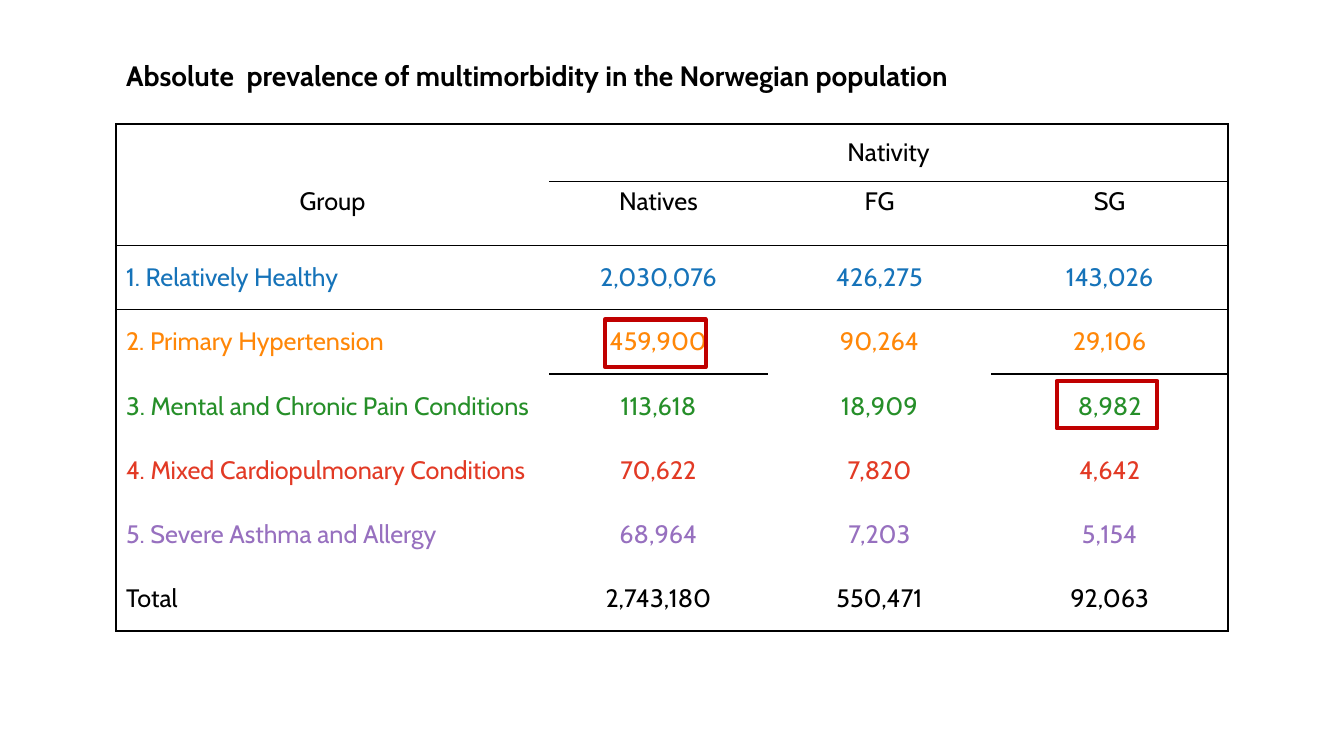
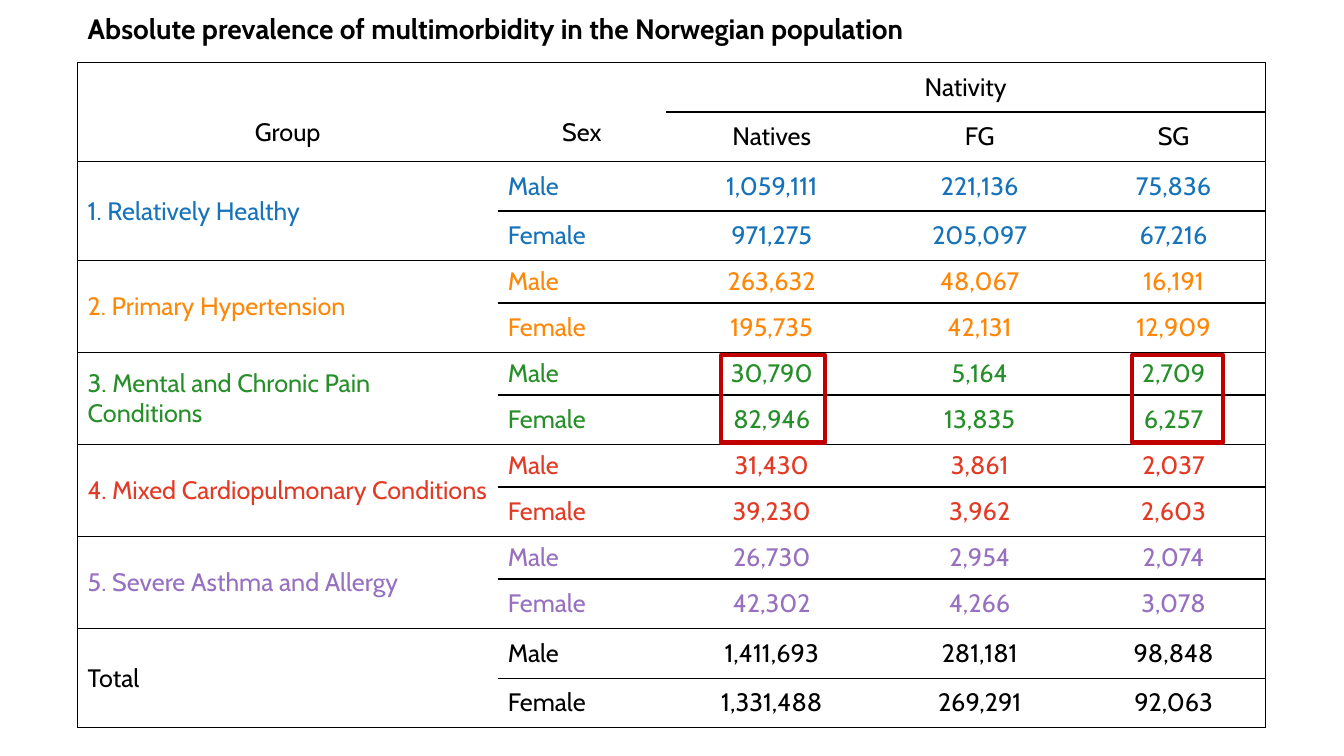
from lxml import etree
from pptx import Presentation
from pptx.dml.color import RGBColor
from pptx.enum.shapes import MSO_SHAPE
from pptx.enum.text import MSO_ANCHOR, MSO_AUTO_SIZE, PP_ALIGN
from pptx.oxml.ns import qn
from pptx.util import Inches, Pt

RECTANGLE = MSO_SHAPE.RECTANGLE
TOP, MIDDLE = MSO_ANCHOR.TOP, MSO_ANCHOR.MIDDLE
LEFT, CENTER = PP_ALIGN.LEFT, PP_ALIGN.CENTER
NO_AUTOFIT = MSO_AUTO_SIZE.NONE
PLAIN_TABLE_STYLE = "{2D5ABB26-0587-4C30-8999-92F81FD0307C}"


class Theme:
    font = "Cabin"
    title_size, body_size = Pt(20), Pt(18)
    rule_width, highlight_width = Pt(1), Pt(3)
    ink, paper, highlight = "000000", "FFFFFF", "C00000"
    groups = ["1673B9", "FF8708", "268F29", "E23A25", "9770BF", ink]


GROUPS = [
    "1. Relatively Healthy",
    "2. Primary Hypertension",
    "3. Mental and Chronic Pain Conditions",
    "4. Mixed Cardiopulmonary Conditions",
    "5. Severe Asthma and Allergy",
    "Total",
]
COHORTS = ["Natives", "FG", "SG"]
COUNTS = [
    ["2,030,076", "426,275", "143,026"],
    ["459,900", "90,264", "29,106"],
    ["113,618", "18,909", "8,982"],
    ["70,622", "7,820", "4,642"],
    ["68,964", "7,203", "5,154"],
    ["2,743,180", "550,471", "92,063"],
]
COUNTS_BY_SEX = [
    (["1,059,111", "221,136", "75,836"], ["971,275", "205,097", "67,216"]),
    (["263,632", "48,067", "16,191"], ["195,735", "42,131", "12,909"]),
    (["30,790", "5,164", "2,709"], ["82,946", "13,835", "6,257"]),
    (["31,430", "3,861", "2,037"], ["39,230", "3,962", "2,603"]),
    (["26,730", "2,954", "2,074"], ["42,302", "4,266", "3,078"]),
    (["1,411,693", "281,181", "98,848"], ["1,331,488", "269,291", "92,063"]),
]

overall_rows = [["", "Nativity", "", ""], ["Group", *COHORTS]]
overall_rows += [[group, *counts] for group, counts in zip(GROUPS, COUNTS)]

sex_rows = [["", "", "Nativity", "", ""], ["Group", "Sex", *COHORTS]]
for group, (male, female) in zip(GROUPS, COUNTS_BY_SEX):
    sex_rows += [[group, "Male", *male], ["", "Female", *female]]

# "rules" maps each horizontal boundary to the columns that its line crosses.
# "merges" holds first row, first column, last row and last column.
SLIDES = [
    dict(
        title="Absolute  prevalence of multimorbidity in the Norwegian population",
        title_box=(1.15, 0.53, 8.63, 0.44),
        table_box=(1.15, 1.23, 11.03, 5.03),
        rows=overall_rows,
        widths=[4.3, 2.17, 2.22, 2.35],
        heights=[0.57] + [0.64] * 7,
        merges=[(0, 1, 0, 3)],
        rules={0: range(4), 1: range(1, 4), 2: range(4), 3: (1, 3), 8: range(4)},
        label_columns=1,
        top_columns=4,
        group_height=1,
        highlights=[(6, 3.17, 1, 0.47), (10.48, 3.78, 1, 0.47)],
    ),
    dict(
        title="Absolute prevalence of multimorbidity in the Norwegian population",
        title_box=(0.77, 0.06, 8.93, 0.44),
        table_box=(0.77, 0.62, 11.78, 6.6),
        rows=sex_rows,
        widths=[4.17, 1.67, 2.1, 2.03, 1.82],
        heights=[0.49] * 4 + [0.42, 0.49] * 4 + [0.49] * 2,
        merges=[(0, 2, 0, 4)] + [(r, 0, r + 1, 0) for r in range(2, 14, 2)],
        rules={r: range(r % 2, 5) for r in range(15)} | {1: range(2, 5)},
        label_columns=2,
        top_columns=2,
        group_height=2,
        highlights=[(7.15, 3.52, 1.03, 0.87), (11.23, 3.52, 0.9, 0.87)],
    ),
]


def write(frame, text, size, color, align, bold=False):
    frame.text = text
    paragraph = frame.paragraphs[0]
    paragraph.alignment = align
    for run in paragraph.runs:
        run.font.name, run.font.size, run.font.bold = Theme.font, size, bold
        run.font.color.rgb = RGBColor.from_string(color)


def add_border(cell, side):
    """Rule one side of a cell; call in the order L, R, T, B and before filling."""
    line = etree.SubElement(cell._tc.get_or_add_tcPr(), qn(f"a:ln{side}"),
                            w=str(Theme.rule_width))
    fill = etree.SubElement(line, qn("a:solidFill"))
    etree.SubElement(fill, qn("a:srgbClr"), val=Theme.ink)


prs = Presentation()
prs.slide_width, prs.slide_height = Inches(13.33), Inches(7.5)
title_only = prs.slide_layouts[5]

for content in SLIDES:
    slide = prs.slides.add_slide(title_only)

    title = slide.shapes.title
    title.left, title.top, title.width, title.height = map(Inches, content["title_box"])
    write(title.text_frame, content["title"], Theme.title_size, Theme.ink, LEFT, bold=True)
    title.text_frame.word_wrap = True
    title.text_frame.auto_size = NO_AUTOFIT
    title.text_frame.vertical_anchor = TOP

    rows, widths, heights = content["rows"], content["widths"], content["heights"]
    box = [Inches(length) for length in content["table_box"]]
    table = slide.shapes.add_table(len(rows), len(widths), *box).table
    table.first_row = table.horz_banding = False
    table._tbl.tblPr.find(qn("a:tableStyleId")).text = PLAIN_TABLE_STYLE
    for column, width in zip(table.columns, widths):
        column.width = int(box[2] * width / sum(widths))
    for row, height in zip(table.rows, heights):
        row.height = int(box[3] * height / sum(heights))
    for top, left, bottom, right in content["merges"]:
        table.cell(top, left).merge(table.cell(bottom, right))

    for r, texts in enumerate(rows):
        for c, text in enumerate(texts):
            cell = table.cell(r, c)
            below, after = r + 1, c + 1
            if cell.is_merge_origin:
                below, after = r + cell.span_height, c + cell.span_width
            rules = content["rules"]
            ruled = {
                "L": c == 0,
                "R": after == len(widths),
                "T": c in rules.get(r, ()),
                "B": c in rules.get(below, ()),
            }
            for side, drawn in ruled.items():
                if drawn:
                    add_border(cell, side)
            cell.fill.solid()
            cell.fill.fore_color.rgb = RGBColor.from_string(Theme.paper)

            is_header = r < 2
            color = Theme.ink if is_header else Theme.groups[(r - 2) // content["group_height"]]
            is_label = not is_header and c < content["label_columns"]
            write(cell.text_frame, text, Theme.body_size, color, LEFT if is_label else CENTER)
            at_top = r == 1 and c < content["top_columns"]
            cell.vertical_anchor = TOP if at_top else MIDDLE

    for frame_box in content["highlights"]:
        highlight = slide.shapes.add_shape(RECTANGLE, *map(Inches, frame_box))
        highlight.shadow.inherit = False
        highlight.fill.background()
        highlight.line.color.rgb = RGBColor.from_string(Theme.highlight)
        highlight.line.width = Theme.highlight_width

prs.save("out.pptx")
